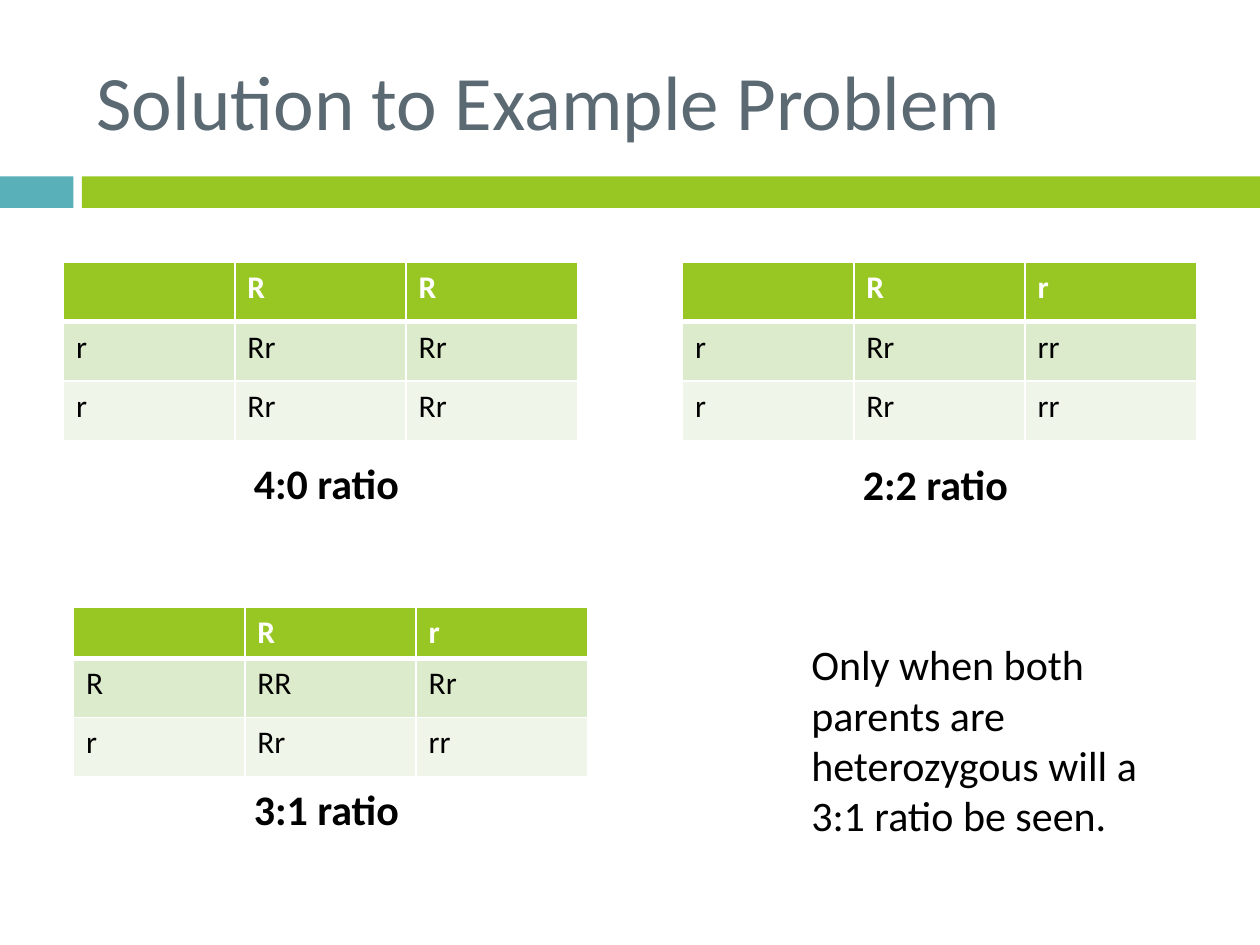
from dataclasses import dataclass

from lxml import etree
from pptx import Presentation
from pptx.dml.color import RGBColor
from pptx.enum.shapes import MSO_SHAPE
from pptx.enum.text import MSO_ANCHOR, MSO_AUTO_SIZE, PP_ALIGN
from pptx.oxml.ns import qn
from pptx.util import Pt

RECT = MSO_SHAPE.RECTANGLE
MIDDLE = MSO_ANCHOR.MIDDLE
LEFT = PP_ALIGN.LEFT
GROW = MSO_AUTO_SIZE.SHAPE_TO_FIT_TEXT

FONT = "Calibri"
HUES = {
    "teal": "59B0B9",
    "green": "98C723",
    "slate": "5B6973",
    "dark": "DDEBCD",
    "pale": "EFF5E8",
    "white": "FFFFFF",
    "black": "000000",
}
COL = 97.9
ROW = 33.9


@dataclass
class Bar:
    left: float
    width: float
    hue: str


@dataclass
class Cross:
    """A Punnett square: one parent's alleles on top, the other's at the side."""
    left: float
    top: float
    head: str
    side: str
    first: float = ROW


@dataclass
class Note:
    left: float
    top: float
    width: float
    height: float
    text: str
    bold: bool = True


BARS = [Bar(0, 42, "teal"), Bar(46.8, 673.2, "green")]
CROSSES = [
    Cross(36.3, 150, "RR", "rr"),
    Cross(390, 150, "Rr", "rr"),
    Cross(42, 347, "Rr", "Rr", 28.8),
]
NOTES = [
    Note(138, 258, 102, 36.4, "4:0 ratio"),
    Note(486, 258.5, 102, 36.4, "2:2 ratio"),
    Note(138, 444, 102, 36.4, "3:1 ratio"),
    Note(456.5, 361.5, 209.5, 124,
         "Only when both parents are heterozygous will a 3:1 ratio be seen.", False),
]


def color(hue: str) -> RGBColor:
    return RGBColor.from_string(HUES[hue])


def write(frame, text: str, size: float, hue: str, bold: bool = False) -> None:
    para = frame.paragraphs[0]
    para.alignment = LEFT
    run = para.add_run()
    run.text = text
    font = run.font
    font.name, font.size, font.bold = FONT, Pt(size), bold
    font.color.rgb = color(hue)


def edge(cell, side: str, width: float) -> None:
    props = cell._tc.get_or_add_tcPr()
    line = etree.SubElement(props, qn("a:ln" + side), w=str(Pt(width)))
    fill = etree.SubElement(line, qn("a:solidFill"))
    etree.SubElement(fill, qn("a:srgbClr"), val=HUES["white"])


def draw_bar(slide, bar: Bar) -> None:
    shape = slide.shapes.add_shape(RECT, Pt(bar.left), Pt(100.8), Pt(bar.width), Pt(18))
    shape.shadow.inherit = False
    shape.fill.solid()
    shape.fill.fore_color.rgb = color(bar.hue)
    shape.line.fill.background()


def draw_cross(slide, cross: Cross) -> None:
    heights = [cross.first, ROW, ROW]
    table = slide.shapes.add_table(
        3, 3, Pt(cross.left), Pt(cross.top), Pt(3 * COL), Pt(sum(heights))).table
    for col in table.columns:
        col.width = Pt(COL)
    # Each inner cell joins its two alleles, dominant one first
    grid = [["", *cross.head]]
    grid += [[a, *("".join(sorted(a + b)) for b in cross.head)] for a in cross.side]
    for i, (texts, hue) in enumerate(zip(grid, ("green", "dark", "pale"))):
        table.rows[i].height = Pt(heights[i])
        for j, text in enumerate(texts):
            cell = table.cell(i, j)
            sides = {"L": 1, "R": 1, "T": 3 if i == 1 else 1, "B": 3 if i == 0 else 1}
            for side, width in sides.items():
                edge(cell, side, width)
            cell.fill.solid()
            cell.fill.fore_color.rgb = color(hue)
            if text:
                write(cell.text_frame, text, 18, "black" if i else "white", i == 0)


def draw_note(slide, note: Note) -> None:
    box = slide.shapes.add_textbox(
        Pt(note.left), Pt(note.top), Pt(note.width), Pt(note.height))
    frame = box.text_frame
    frame.word_wrap = True
    frame.auto_size = GROW
    write(frame, note.text, 24, "black", note.bold)


def main() -> None:
    deck = Presentation()
    deck.slide_width, deck.slide_height = Pt(720), Pt(540)
    slide = deck.slides.add_slide(deck.slide_layouts[5])

    # Title and the band below it
    title = slide.shapes.title
    title.left, title.top, title.width, title.height = Pt(48), Pt(18), Pt(642), Pt(78)
    title.text_frame.vertical_anchor = MIDDLE
    write(title.text_frame, "Solution to Example Problem", 44, "slate")
    for bar in BARS:
        draw_bar(slide, bar)

    # Squares, their ratios and the conclusion
    for cross in CROSSES:
        draw_cross(slide, cross)
    for note in NOTES:
        draw_note(slide, note)

    deck.save("out.pptx")


if __name__ == "__main__":
    main()
